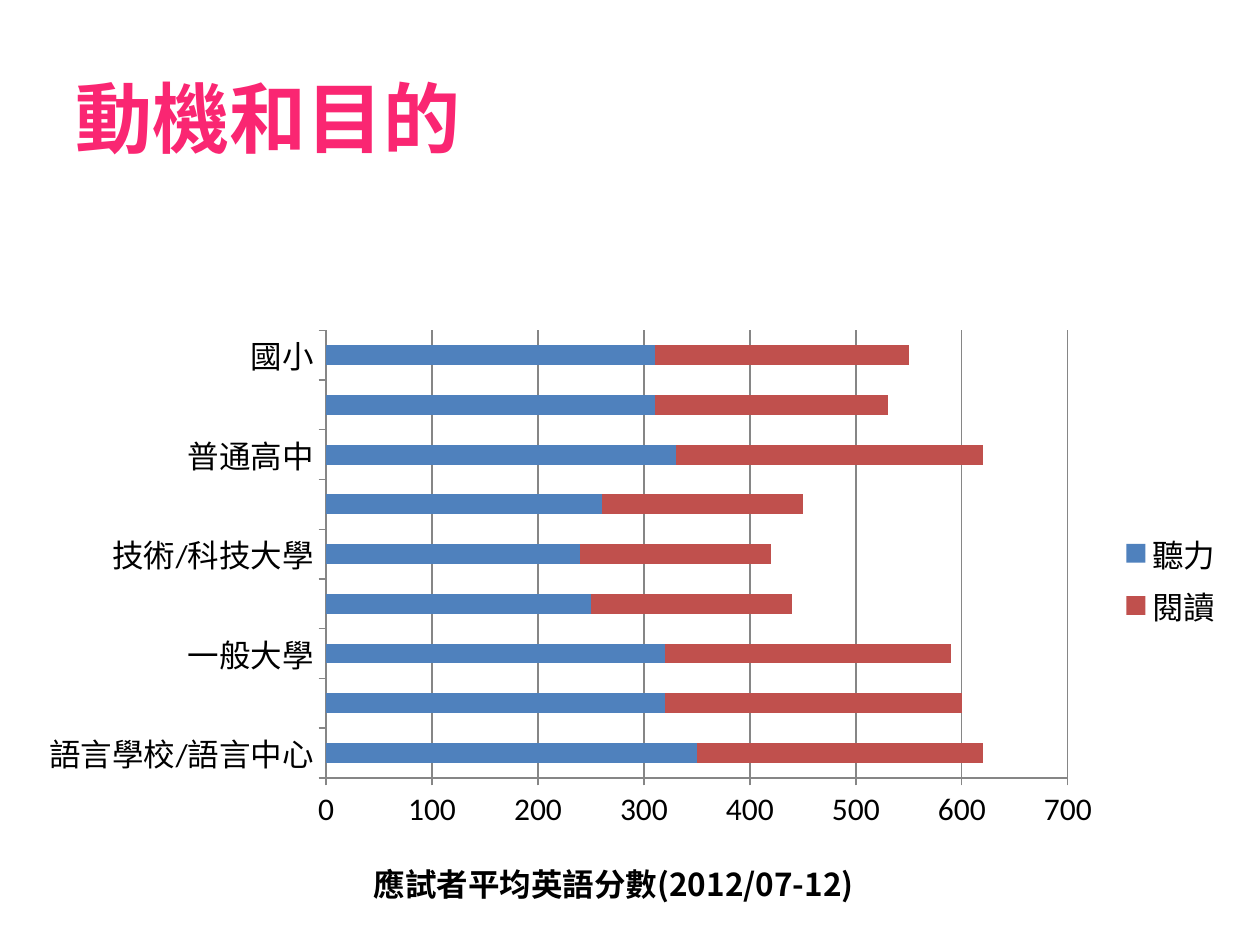
import lxml.etree
import pptx
import pptx.chart.data
import pptx.dml.color
import pptx.enum.chart
import pptx.enum.text
import pptx.oxml.ns
import pptx.util
from pptx.util import Cm

CJK_FONT = "Noto Sans CJK SC"
GRID_COLOR = "868686"

# Content: (school, listening, reading), from the bottom bar up
SCORES = [
    ("語言學校/語言中心", 350, 270),
    ("碩士或以上", 320, 280),
    ("一般大學", 320, 270),
    ("專科學校", 250, 190),
    ("技術/科技大學", 240, 180),
    ("高級職業學校", 260, 190),
    ("普通高中", 330, 290),
    ("國中", 310, 220),
    ("國小", 310, 240),
]
SERIES = [("聽力", "4F81BD"), ("閱讀", "C0504D")]

# Text, left, top, width, height, size, colour, vertical anchor
ANCHOR = pptx.enum.text.MSO_ANCHOR
TEXTS = [
    ("應試者平均英語分數(2012/07-12)", 7.29, 17.32, 14.2, 1.02, 18, "000000", ANCHOR.TOP),
    ("動機和目的", 1.27, 0.76, 13.44, 3.18, 44, "FA2672", ANCHOR.MIDDLE),
]


def rgb(value):
    return pptx.dml.color.RGBColor.from_string(value)


def add_text(page, text, left, top, width, height, size, color, anchor):
    box = page.shapes.add_textbox(Cm(left), Cm(top), Cm(width), Cm(height))
    frame = box.text_frame
    frame.word_wrap = True
    frame.vertical_anchor = anchor
    frame.text = text
    span = frame.paragraphs[0].runs[0]
    span.font.size = pptx.util.Pt(size)
    span.font.bold = True
    span.font.color.rgb = rgb(color)
    span.font.name = CJK_FONT
    # East Asian characters take their own typeface
    east_asian = lxml.etree.SubElement(span.font._element, pptx.oxml.ns.qn("a:ea"))
    east_asian.set("typeface", CJK_FONT)


def add_score_chart(page):
    data = pptx.chart.data.CategoryChartData()
    data.categories = [row[0] for row in SCORES]
    for column, (name, color) in enumerate(SERIES, start=1):
        data.add_series(name, [row[column] for row in SCORES])
    chart = page.shapes.add_chart(
        pptx.enum.chart.XL_CHART_TYPE.BAR_STACKED,
        Cm(0.51), Cm(6.45), Cm(24.41), Cm(10.46), data,
    ).chart
    chart.has_title = False
    chart.font.name = "Calibri"
    chart.font.size = pptx.util.Pt(18)
    chart.font.color.rgb = rgb("000000")

    # Bars
    plot = chart.plots[0]
    plot.gap_width = 150
    plot.overlap = 100
    plot.vary_by_categories = False
    for series, (name, color) in zip(plot.series, SERIES):
        series.format.fill.solid()
        series.format.fill.fore_color.rgb = rgb(color)

    # Axes and grid
    chart.value_axis.has_major_gridlines = True
    chart.value_axis.minimum_scale = 0
    chart.value_axis.maximum_scale = 700
    chart.value_axis.major_unit = 100
    chart.category_axis.has_major_gridlines = False
    lines = [chart.value_axis.major_gridlines.format.line]
    for axis in (chart.category_axis, chart.value_axis):
        axis.major_tick_mark = pptx.enum.chart.XL_TICK_MARK.OUTSIDE
        axis.minor_tick_mark = pptx.enum.chart.XL_TICK_MARK.NONE
        lines.append(axis.format.line)
    for line in lines:
        line.color.rgb = rgb(GRID_COLOR)
        line.width = pptx.util.Pt(0.75)

    # Legend
    chart.has_legend = True
    chart.legend.position = pptx.enum.chart.XL_LEGEND_POSITION.RIGHT
    chart.legend.include_in_layout = False


def main():
    deck = pptx.Presentation()
    deck.slide_width, deck.slide_height = Cm(25.4), Cm(19.05)
    page = deck.slides.add_slide(deck.slide_layouts[6])
    add_score_chart(page)
    for text in TEXTS:
        add_text(page, *text)
    deck.save("out.pptx")


if __name__ == "__main__":
    main()
